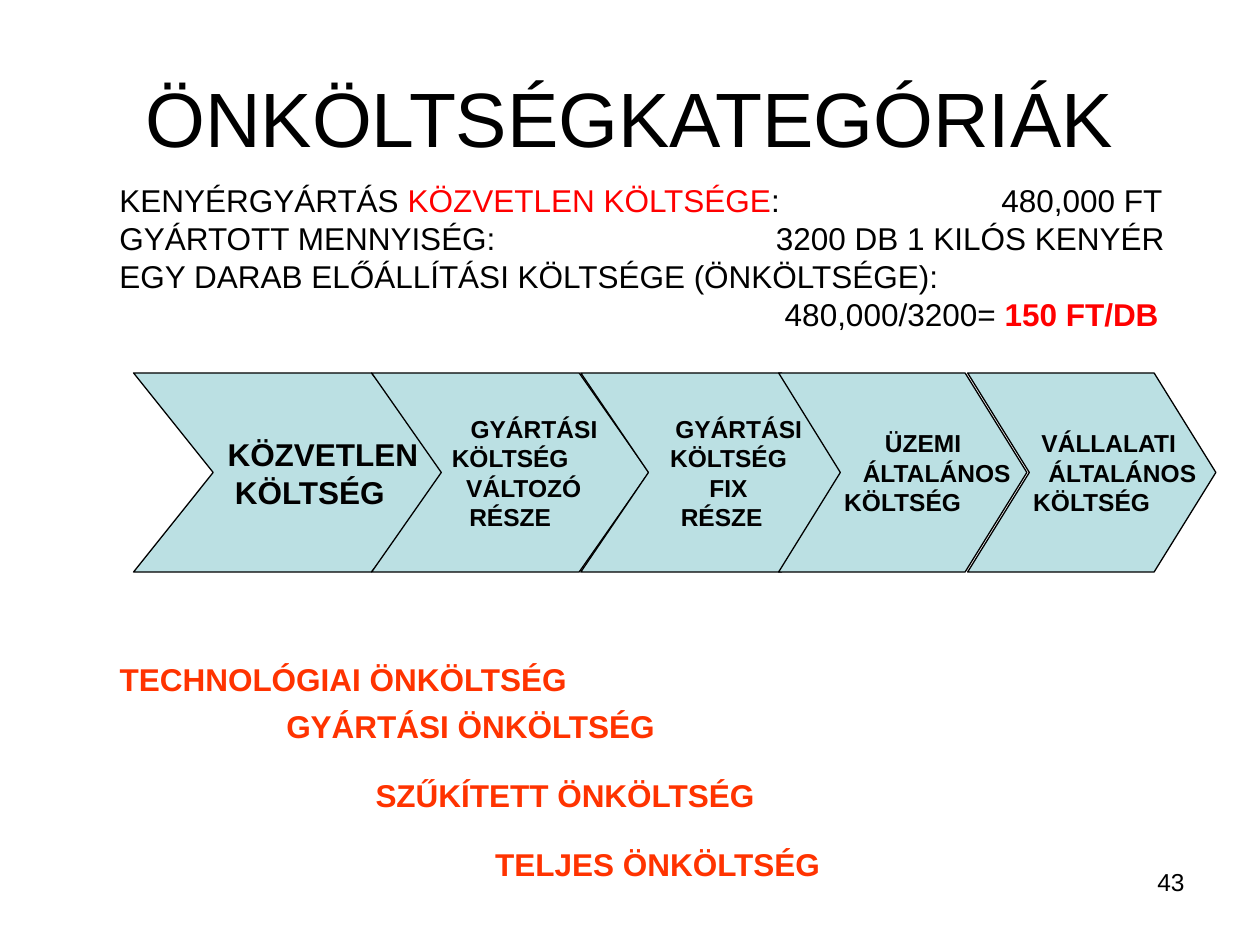
from dataclasses import dataclass

from lxml.etree import SubElement
from pptx import Presentation
from pptx.dml.color import RGBColor
from pptx.enum.shapes import MSO_SHAPE as Preset
from pptx.enum.text import MSO_ANCHOR as Anchor, MSO_AUTO_SIZE as AutoSize, PP_ALIGN as Align
from pptx.oxml.ns import qn
from pptx.util import Inches, Pt


@dataclass(frozen=True)
class Theme:
    """Colours, font and type sizes of the slide."""
    font: str = "Arial"
    ink: str = "000000"
    red: str = "FF0000"
    orange: str = "FF3300"
    chevron: str = "BBE0E3"
    title_size: int = 44
    body_size: int = 18
    small_size: int = 14
    space_width: float = 0.278


THEME = Theme()

CHEVRON_TOP, CHEVRON_HEIGHT = 2.96, 1.58
CHEVRONS = [
    (1.06, 2.52, 0.4, THEME.body_size, [("KÖZVETLEN", 7), ("KÖLTSÉG", 4)]),
    (2.95, 2.2, 0.35, THEME.small_size,
     [("GYÁRTÁSI", 7), ("KÖLTSÉG", 0), ("VÁLTOZÓ", 4), ("RÉSZE", 0)]),
    (4.61, 2.13, 0.34, THEME.small_size,
     [("GYÁRTÁSI", 7), ("KÖLTSÉG", 4), ("FIX", 4), ("RÉSZE", 2)]),
    (6.18, 1.97, 0.31, THEME.small_size,
     [("ÜZEMI", 6), ("ÁLTALÁNOS", 10), ("KÖLTSÉG", 0)]),
    (7.68, 1.97, 0.31, THEME.small_size,
     [("VÁLLALATI", 5), ("ÁLTALÁNOS", 9), ("KÖLTSÉG", 0)]),
]
COST_LEVELS = [
    ("TECHNOLÓGIAI ÖNKÖLTSÉG", 0.84, 5.19, 3.77),
    ("GYÁRTÁSI ÖNKÖLTSÉG", 2.16, 5.56, 3.15),
    ("SZŰKÍTETT ÖNKÖLTSÉG", 2.87, 6.11, 3.23),
    ("TELJES ÖNKÖLTSÉG", 3.82, 6.66, 2.8),
]
CALCULATION = [
    (7.0, [("KENYÉRGYÁRTÁS ", THEME.ink, False), ("KÖZVETLEN KÖLTSÉGE", THEME.red, False),
           (":\t480,000 FT", THEME.ink, False)]),
    (5.21, [("GYÁRTOTT MENNYISÉG:\t3200 DB 1 KILÓS KENYÉR", THEME.ink, False)]),
    (None, [("EGY DARAB ELŐÁLLÍTÁSI KÖLTSÉGE (ÖNKÖLTSÉGE):", THEME.ink, False)]),
    (5.28, [("\t480,000/3200= ", THEME.ink, False), ("150 FT/DB", THEME.red, True)]),
]


def add_run(paragraph, text, size, color=THEME.ink, bold=False):
    """Append one formatted run to a paragraph."""
    run = paragraph.add_run()
    run.text = text
    run.font.name = THEME.font
    run.font.size = Pt(size)
    run.font.bold = bold
    run.font.color.rgb = RGBColor.from_string(color)


def next_paragraph(frame, index):
    """Return the first paragraph of a frame, or a new one for later indexes."""
    return frame.add_paragraph() if index else frame.paragraphs[0]


def set_tab_stop(paragraph, position):
    """Give a paragraph one left tab stop, in inches."""
    tabs = SubElement(paragraph._p.get_or_add_pPr(), qn("a:tabLst"))
    SubElement(tabs, qn("a:tab"), pos=str(Inches(position)), algn="l")


def add_text_box(slide, left, top, width, height, wrap=True):
    """Add an empty text box and return its text frame."""
    box = slide.shapes.add_textbox(Inches(left), Inches(top), Inches(width), Inches(height))
    box.text_frame.word_wrap = wrap
    return box.text_frame


def add_title(slide, text):
    """Place and format the title placeholder."""
    title = slide.shapes.title
    title.left, title.top = Inches(0.5), Inches(0.3)
    title.width, title.height = Inches(9), Inches(1.25)
    frame = title.text_frame
    frame.auto_size = AutoSize.NONE
    frame.vertical_anchor = Anchor.MIDDLE
    paragraph = frame.paragraphs[0]
    paragraph.alignment = Align.CENTER
    add_run(paragraph, text, THEME.title_size)


def add_chevron(slide, left, width, point, size, lines):
    """Add a cost chevron whose centred lines are indented by space widths."""
    shape = slide.shapes.add_shape(Preset.CHEVRON, Inches(left), Inches(CHEVRON_TOP),
                                   Inches(width), Inches(CHEVRON_HEIGHT))
    shape.adjustments[0] = point
    shape.shadow.inherit = False
    shape.fill.solid()
    shape.fill.fore_color.rgb = RGBColor.from_string(THEME.chevron)
    shape.line.color.rgb = RGBColor.from_string(THEME.ink)
    shape.line.width = Pt(0.75)
    frame = shape.text_frame
    frame.word_wrap = False
    frame.vertical_anchor = Anchor.MIDDLE
    for index, (text, indent) in enumerate(lines):
        paragraph = next_paragraph(frame, index)
        paragraph.alignment = Align.CENTER
        paragraph._p.get_or_add_pPr().set("marL", str(Pt(indent * size * THEME.space_width)))
        add_run(paragraph, text, size, bold=True)


def add_cost_level(slide, text, left, top, width):
    """Add one bold cost level label."""
    paragraph = add_text_box(slide, left, top, width, 0.4, wrap=False).paragraphs[0]
    paragraph.alignment = Align.CENTER
    add_run(paragraph, text, THEME.body_size, THEME.orange, bold=True)


def add_calculation(slide):
    """Add the unit cost calculation with its tabbed amounts."""
    frame = add_text_box(slide, 0.85, 1.39, 8.86, 1.31)
    for index, (tab, runs) in enumerate(CALCULATION):
        paragraph = next_paragraph(frame, index)
        if tab:
            set_tab_stop(paragraph, tab)
        for text, color, bold in runs:
            add_run(paragraph, text, THEME.body_size, color, bold)


def add_page_number(slide, number):
    """Add the page number at the lower right."""
    paragraph = add_text_box(slide, 7.17, 6.83, 2.33, 0.52).paragraphs[0]
    paragraph.alignment = Align.RIGHT
    add_run(paragraph, number, THEME.small_size)


def main():
    """Build and save the slide."""
    presentation = Presentation()
    presentation.slide_width, presentation.slide_height = Inches(10), Inches(7.5)
    slide = presentation.slides.add_slide(presentation.slide_layouts[5])
    add_page_number(slide, "43")
    add_title(slide, "ÖNKÖLTSÉGKATEGÓRIÁK")
    for chevron in CHEVRONS:
        add_chevron(slide, *chevron)
    for level in COST_LEVELS:
        add_cost_level(slide, *level)
    add_calculation(slide)
    presentation.save("out.pptx")


if __name__ == "__main__":
    main()
